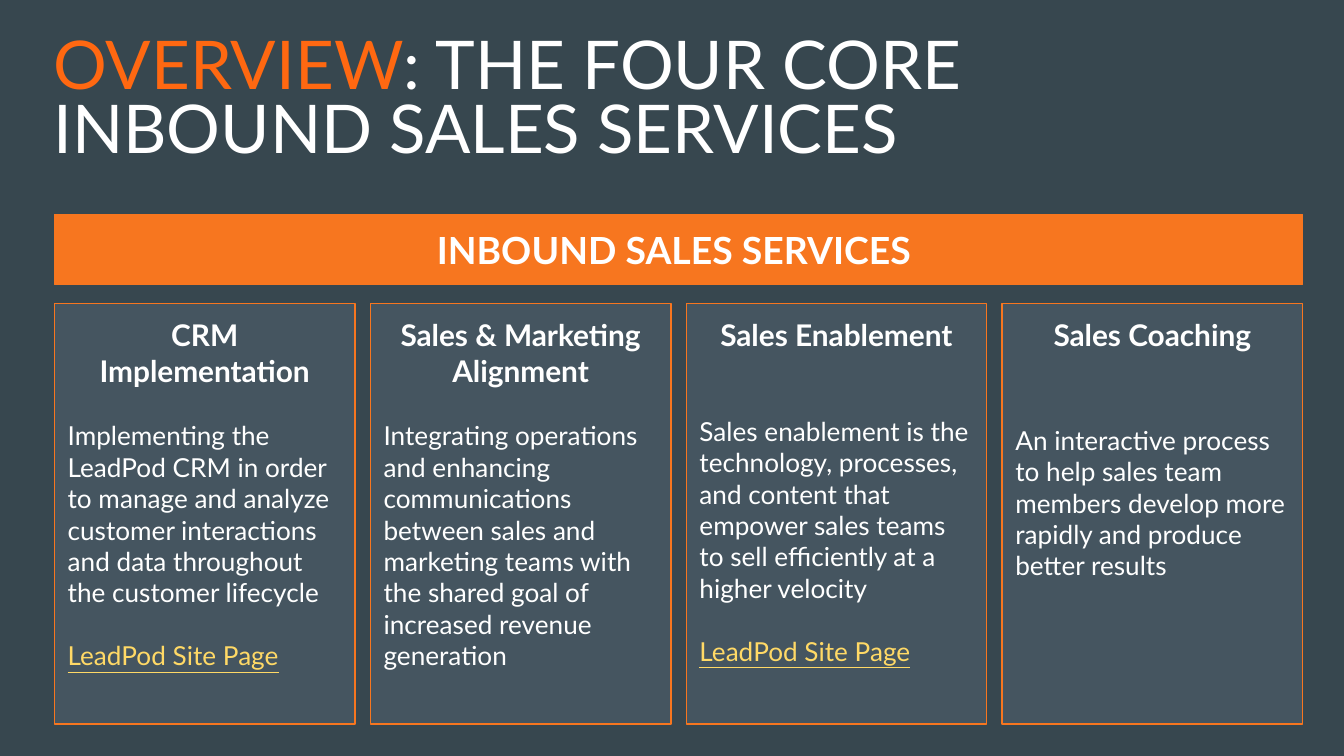
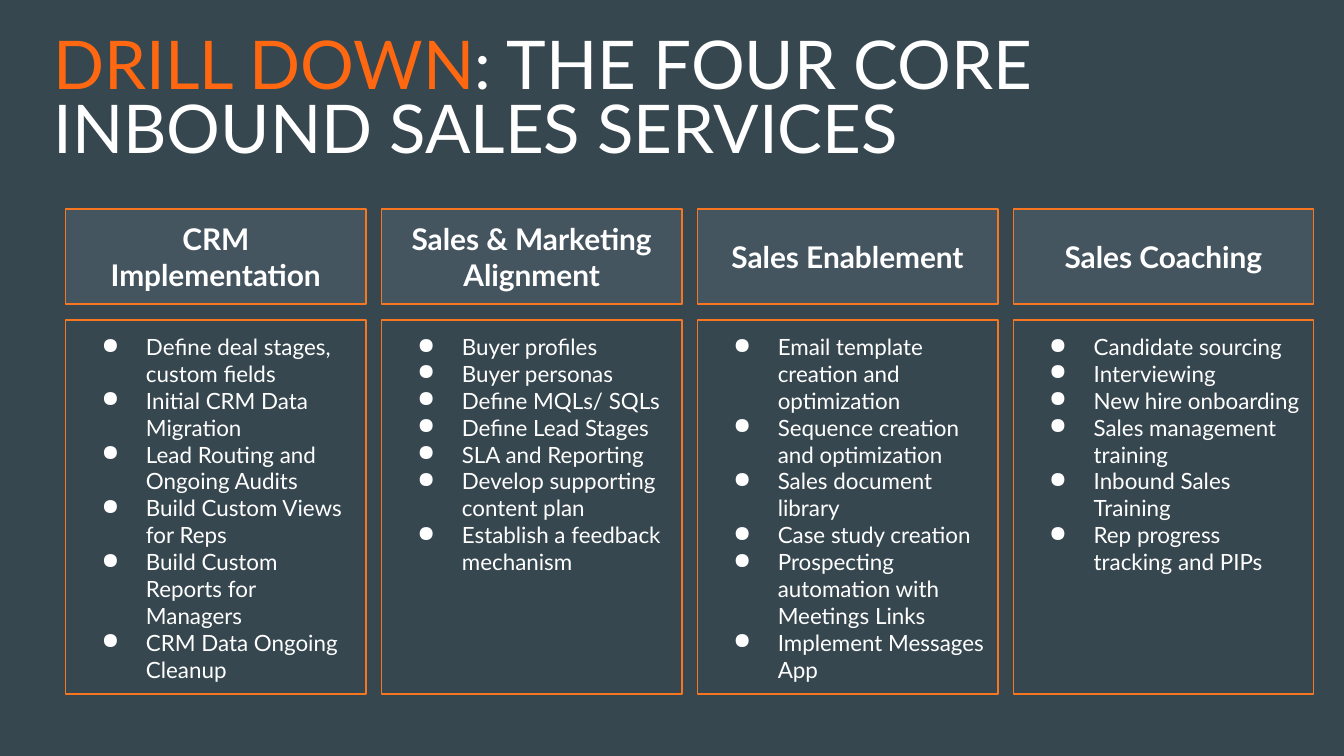
from dataclasses import dataclass

from lxml import etree
from pptx import Presentation
from pptx.dml.color import RGBColor
from pptx.enum.shapes import MSO_SHAPE
from pptx.enum.text import MSO_ANCHOR, PP_ALIGN
from pptx.oxml.ns import qn
from pptx.util import Cm, Pt

RECT = MSO_SHAPE.RECTANGLE
TOP, MIDDLE = MSO_ANCHOR.TOP, MSO_ANCHOR.MIDDLE
LEFT, CENTER = PP_ALIGN.LEFT, PP_ALIGN.CENTER

FONT = "Lato"
COLORS = {
    "background": "37474F",
    "panel": "455560",
    "orange": "F7761F",
    "title": "FF6811",
    "white": "FFFFFF",
    "link": "FFD966",
}

# Text styles
BAND = {"size": Pt(20), "bold": True}
HEADING = {"size": Pt(16), "bold": True}
BODY = {"size": Pt(14), "bold": False}
LINK = {"size": Pt(14), "bold": False, "underline": True}
BULLET = {"size": Pt(12)}
TITLE = {"size": Pt(36)}

# Column grid, in cm
COL_W, COL_STEP = 5.68, 5.97
OVERVIEW_X, DRILL_X = 1.03, 1.24
LINE_GAP = 16.8  # one line of body text, in points


@dataclass
class Box:
    x: float
    y: float
    w: float
    h: float

    def emu(self) -> list:
        return [Cm(v) for v in (self.x, self.y, self.w, self.h)]


@dataclass
class Service:
    name: str
    summary: str
    tasks: list[str]
    gap: float = LINE_GAP
    link: str = ""


SITE_PAGE = "LeadPod Site Page"
SERVICES = [
    Service(
        "CRM Implementation",
        "Implementing the LeadPod CRM in order to manage and analyze customer "
        "interactions and data throughout the customer lifecycle",
        ["Define deal stages, custom fields", "Initial CRM Data Migration",
         "Lead Routing and Ongoing Audits", "Build Custom Views for Reps",
         "Build Custom Reports for Managers", "CRM Data Ongoing Cleanup"],
        link=SITE_PAGE,
    ),
    Service(
        "Sales & Marketing Alignment",
        "Integrating operations and enhancing communications between sales and "
        "marketing teams with the shared goal of increased revenue generation",
        ["Buyer profiles", "Buyer personas", "Define MQLs/ SQLs",
         "Define Lead Stages", "SLA and Reporting",
         "Develop supporting content plan", "Establish a feedback mechanism"],
    ),
    Service(
        "Sales Enablement",
        "Sales enablement is the technology, processes, and content that empower "
        "sales teams to sell efficiently at a higher velocity",
        ["Email template creation and optimization",
         "Sequence creation and optimization", "Sales document library",
         "Case study creation", "Prospecting automation with Meetings Links",
         "Implement Messages App"],
        gap=2 * LINE_GAP,
        link=SITE_PAGE,
    ),
    Service(
        "Sales Coaching",
        "An interactive process to help sales team members develop more rapidly "
        "and produce better results",
        ["Candidate sourcing", "Interviewing", "New hire onboarding",
         "Sales management training", "Inbound Sales Training",
         "Rep progress tracking and PIPs"],
        gap=38.4,
    ),
]


def rgb(name: str) -> RGBColor:
    return RGBColor.from_string(COLORS[name])


def set_frame(tf, inset_y: float, anchor=TOP) -> None:
    formats = {
        "word_wrap": True,
        "vertical_anchor": anchor,
        "margin_left": Cm(0.25),
        "margin_right": Cm(0.25),
        "margin_top": Cm(inset_y),
        "margin_bottom": Cm(inset_y),
    }
    for name, value in formats.items():
        setattr(tf, name, value)


def add_run(p, text: str, style: dict, color: str = "white") -> None:
    r = p.add_run()
    r.text = text
    r.font.name = FONT
    r.font.color.rgb = rgb(color)
    for name, value in style.items():
        setattr(r.font, name, value)


def add_para(tf, text: str, style: dict, align=LEFT, color: str = "white",
             before: float = 0):
    """Fill the empty first paragraph, or append a new one."""
    p = tf.paragraphs[0]
    if p.runs:
        p = tf.add_paragraph()
    p.alignment = align
    p.space_before = Pt(before)
    add_run(p, text, style, color)
    return p


def add_bullet(p) -> None:
    pPr = p._p.get_or_add_pPr()
    pPr.set("marL", str(Cm(1.27)))
    pPr.set("indent", str(-Cm(0.84)))
    buClr = etree.SubElement(pPr, qn("a:buClr"))
    etree.SubElement(buClr, qn("a:srgbClr"), val=COLORS["white"])
    etree.SubElement(pPr, qn("a:buChar"), char="●")


def add_panel(s, box: Box, fill: str = "", anchor=TOP):
    """Draw an orange-edged rectangle and return its text frame."""
    sp = s.shapes.add_shape(RECT, *box.emu())
    sp.shadow.inherit = False
    if fill:
        sp.fill.solid()
        sp.fill.fore_color.rgb = rgb(fill)
    else:
        sp.fill.background()
    sp.line.color.rgb = rgb("orange")
    sp.line.width = Pt(0.75)
    set_frame(sp.text_frame, 0.25, anchor)
    return sp.text_frame


def add_slide(prs, keyword: str):
    """Add a slide with the shared background and two-colour title."""
    s = prs.slides.add_slide(prs.slide_layouts[6])
    s.background.fill.solid()
    s.background.fill.fore_color.rgb = rgb("background")
    tf = s.shapes.add_textbox(*Box(0.76, 0.58, 23.57, 2.72).emu()).text_frame
    set_frame(tf, 0.13)
    p = add_para(tf, keyword, TITLE, color="title")
    p.line_spacing = 0.8
    add_run(p, ": THE FOUR CORE INBOUND SALES SERVICES", TITLE)
    return s


def build_overview(prs) -> None:
    s = add_slide(prs, "OVERVIEW")

    # Band across all columns
    band_w = 3 * COL_STEP + COL_W
    tf = add_panel(s, Box(OVERVIEW_X, 4.05, band_w, 1.33), "orange", MIDDLE)
    add_para(tf, "INBOUND SALES SERVICES ", BAND, CENTER)

    # One card per service
    for i, service in enumerate(SERVICES):
        x = OVERVIEW_X + i * COL_STEP
        tf = add_panel(s, Box(x, 5.74, COL_W, 7.95), "panel")
        add_para(tf, service.name, HEADING, CENTER)
        add_para(tf, service.summary, BODY, before=service.gap)
        if service.link:
            add_para(tf, service.link, LINK, color="link", before=LINE_GAP)


def build_drill_down(prs) -> None:
    s = add_slide(prs, "DRILL DOWN")

    # Heading box and task list per service
    for i, service in enumerate(SERVICES):
        x = DRILL_X + i * COL_STEP
        tf = add_panel(s, Box(x, 3.95, COL_W, 1.8), "panel", MIDDLE)
        add_para(tf, service.name, HEADING, CENTER)
        tf = add_panel(s, Box(x, 6.05, COL_W, 7.07))
        for task in service.tasks:
            add_bullet(add_para(tf, task, BULLET))


def main() -> None:
    prs = Presentation()
    prs.slide_width, prs.slide_height = Cm(25.4), Cm(14.29)
    build_overview(prs)
    build_drill_down(prs)
    prs.save("out.pptx")


if __name__ == "__main__":
    main()
